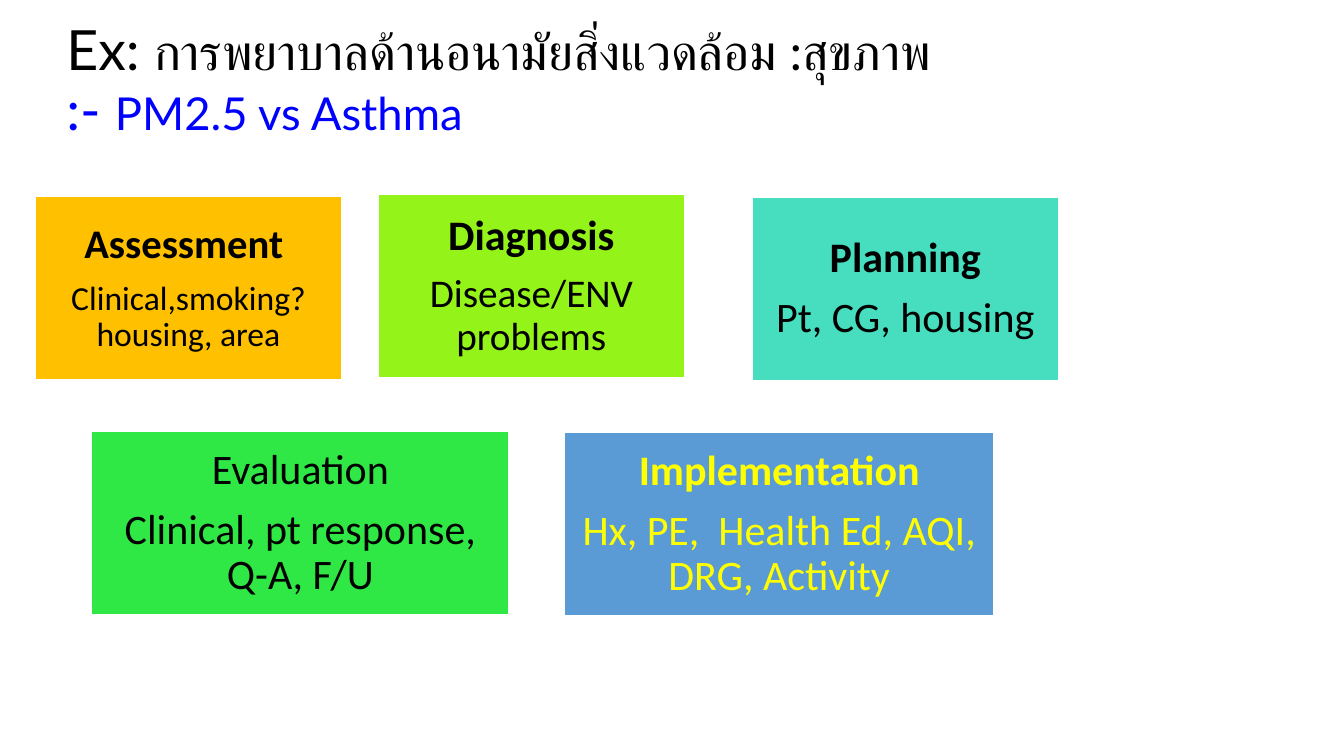
from pptx import Presentation
from pptx.dml.color import RGBColor
from pptx.enum.shapes import MSO_SHAPE
from pptx.enum.text import MSO_ANCHOR, PP_ALIGN
from pptx.util import Inches, Pt

COLORS = {
    "black": "000000", "white": "FFFFFF", "blue": "0000FF", "yellow": "FFFF00",
    "amber": "FFC000", "lime": "94F319", "green": "30E845",
    "teal": "46DEBF", "steel": "5B9BD5",
}
TITLE = [
    [("Ex: ", 39.6, "black"), ("การพยาบาลด้านอนามัยสิ่งแวดล้อม :สุขภาพ ", 36, "black")],
    [(":- ", 39.6, "blue"), ("PM2.5 vs Asthma", 32.4, "blue")],
]
STEPS = [
    (0.35, 1.95, 3.04, "amber", "black",
     [("Assessment ", 29, True), ("Clinical,smoking? housing, area", 24, False)]),
    (3.75, 1.93, 3.04, "lime", "black",
     [("Diagnosis", 30, True), ("Disease/ENV problems", 28, False)]),
    (0.91, 4.28, 4.14, "green", "black",
     [("Evaluation", 30, False), ("Clinical, pt response, Q-A, F/U", 30, False)]),
    (7.46, 1.96, 3.04, "teal", "black",
     [("Planning", 30, True), ("Pt, CG, housing", 30, False)]),
    (5.6, 4.29, 4.26, "steel", "yellow",
     [("Implementation", 30, True), ("Hx, PE,  Health Ed, AQI, DRG, Activity", 30, False)]),
]
HIGH = 1.82
PAD = 0.12


def paint(name):
    return RGBColor.from_string(COLORS[name])


def style(run, face, size, color, bold=False):
    font = run.font
    font.name, font.size, font.bold = face, Pt(size), bold
    font.color.rgb = paint(color)


def add_title(slide):
    box = slide.shapes.add_textbox(Inches(0.56), Inches(0.42), Inches(11.96), Inches(0.79))
    frame = box.text_frame
    frame.word_wrap = True
    frame.vertical_anchor = MSO_ANCHOR.MIDDLE
    para = frame.paragraphs[0]
    para.line_spacing = 0.9
    for row, parts in enumerate(TITLE):
        if row:
            para.add_line_break()
        for text, size, color in parts:
            run = para.add_run()
            run.text = text
            style(run, "Lato", size, color)


def add_step(slide, left, top, width, fill, ink, lines):
    box = slide.shapes.add_shape(
        MSO_SHAPE.RECTANGLE, Inches(left), Inches(top), Inches(width), Inches(HIGH))
    box.shadow.inherit = False
    box.fill.solid()
    box.fill.fore_color.rgb = paint(fill)
    box.line.color.rgb = paint("white")
    box.line.width = Pt(1)
    frame = box.text_frame
    frame.word_wrap = True
    frame.vertical_anchor = MSO_ANCHOR.MIDDLE
    frame.margin_left = frame.margin_right = Inches(PAD)
    frame.margin_top = frame.margin_bottom = Inches(PAD)
    frame.text = "\n".join(text for text, size, bold in lines)
    for para, (text, size, bold) in zip(frame.paragraphs, lines):
        para.alignment = PP_ALIGN.CENTER
        para.line_spacing = 0.9
        para.space_after = Pt(round(size * 0.35, 1))
        style(para.runs[0], "Calibri", size, ink, bold)


def main():
    deck = Presentation()
    deck.slide_width, deck.slide_height = Inches(13.33), Inches(7.5)
    slide = deck.slides.add_slide(deck.slide_layouts[6])
    add_title(slide)
    for step in STEPS:
        add_step(slide, *step)
    deck.save("out.pptx")


if __name__ == "__main__":
    main()
